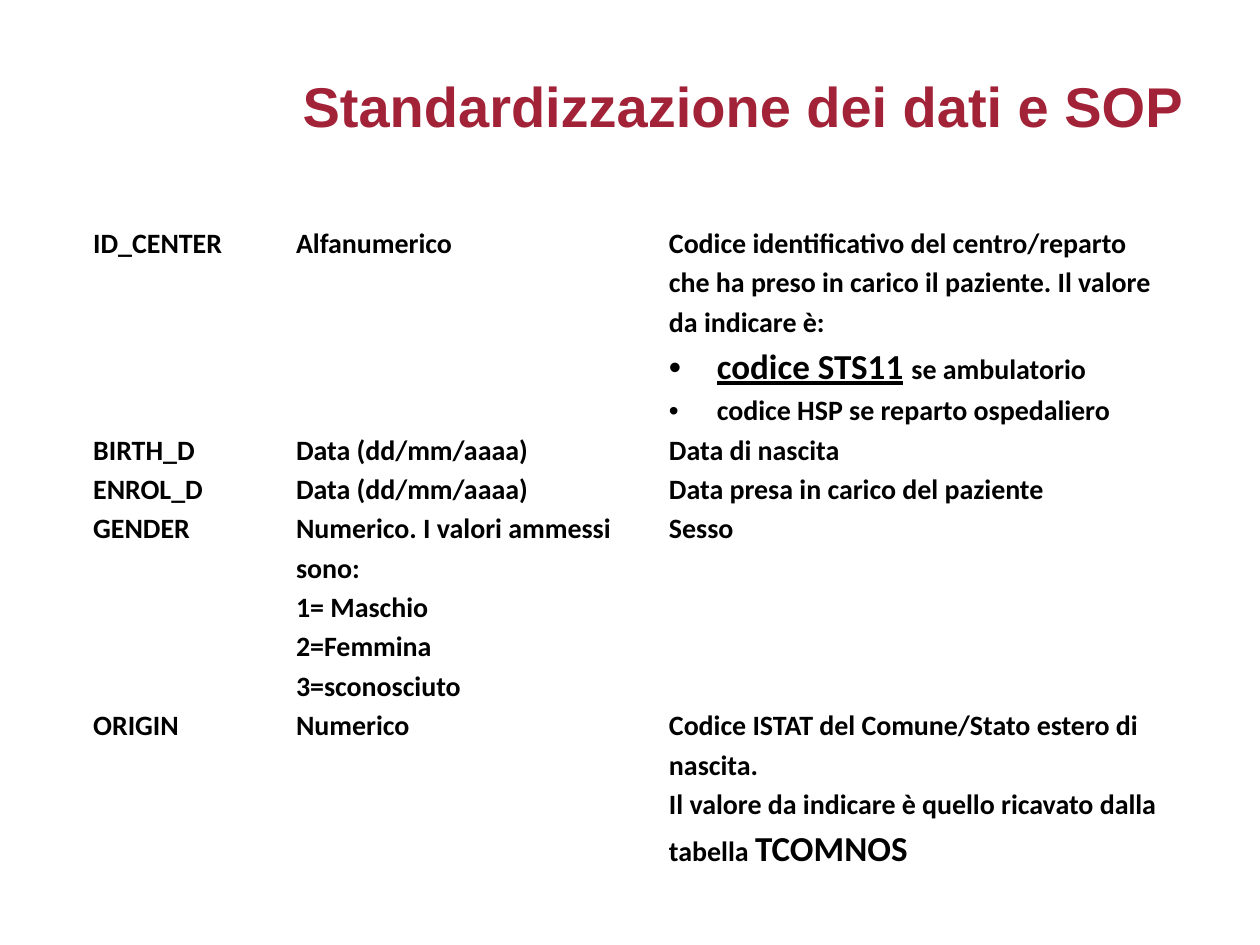
from typing import NamedTuple

from lxml.etree import SubElement
from pptx import Presentation
from pptx.dml.color import RGBColor
from pptx.enum.text import MSO_ANCHOR, PP_ALIGN
from pptx.oxml.ns import qn
from pptx.util import Inches, Pt

WHITE, BLACK, CRIMSON = "FFFFFF", "000000", "A22338"
BODY_SIZE, LARGE_SIZE = 16, 20
LINE_HEIGHT = 0.31
COLUMN_WIDTHS = (1.61, 2.96, 4.09)


class Piece(NamedTuple):
    text: str
    size: int = BODY_SIZE
    underline: bool = False


class Line(NamedTuple):
    pieces: tuple[Piece, ...]
    bullet: bool = False


class Field(NamedTuple):
    name: str
    kind: tuple[Line, ...]
    meaning: tuple[Line, ...]
    text_lines: int


def plain(*texts: str) -> tuple[Line, ...]:
    """One unbulleted line for each text."""
    return tuple(Line((Piece(text),)) for text in texts)


FIELDS = (
    Field(
        "ID_CENTER",
        plain("Alfanumerico"),
        plain("Codice identificativo del centro/reparto che ha preso in carico "
              "il paziente. Il valore da indicare è:")
        + (
            Line((Piece("codice STS11", LARGE_SIZE, True), Piece(" ", LARGE_SIZE),
                  Piece("se ambulatorio")), bullet=True),
            Line((Piece("codice HSP se reparto ospedaliero"),), bullet=True),
        ),
        5,
    ),
    Field("BIRTH_D", plain("Data (dd/mm/aaaa)"), plain("Data di nascita"), 1),
    Field("ENROL_D", plain("Data (dd/mm/aaaa)"),
          plain("Data presa in carico del paziente"), 1),
    Field(
        "GENDER",
        plain("Numerico. I valori ammessi sono:", "1= Maschio", "2=Femmina", "3=sconosciuto"),
        plain("Sesso"),
        5,
    ),
    Field(
        "ORIGIN",
        plain("Numerico"),
        plain("Codice ISTAT del Comune/Stato estero di nascita.")
        + (Line((Piece("Il valore da indicare è quello ricavato dalla tabella "),
                 Piece("TCOMNOS", LARGE_SIZE))),),
        4,
    ),
)


def color(value: str) -> RGBColor:
    return RGBColor.from_string(value)


def style_font(font, name: str, size: int, hex_color: str) -> None:
    font.name = name
    font.size = Pt(size)
    font.bold = True
    font.color.rgb = color(hex_color)


def add_bullet(paragraph) -> None:
    properties = paragraph._p.get_or_add_pPr()
    indent = Inches(0.38)
    properties.set("marL", str(int(indent)))
    properties.set("indent", str(-int(indent)))
    SubElement(properties, qn("a:buFont"), typeface="Arial")
    SubElement(properties, qn("a:buChar"), char="•")


def add_borders(cell, bottom_width: int) -> None:
    properties = cell._tc.get_or_add_tcPr()
    for side, width in (("L", 1), ("R", 1), ("T", 1), ("B", bottom_width)):
        border = SubElement(properties, qn(f"a:ln{side}"), w=str(int(Pt(width))))
        fill = SubElement(border, qn("a:solidFill"))
        SubElement(fill, qn("a:srgbClr"), val=WHITE)


def fill_cell(cell, lines: tuple[Line, ...], bottom_width: int) -> None:
    add_borders(cell, bottom_width)
    cell.fill.solid()
    cell.fill.fore_color.rgb = color(WHITE)
    cell.margin_left = cell.margin_right = Inches(0.07)
    cell.margin_top = cell.margin_bottom = 0
    frame = cell.text_frame
    for index, line in enumerate(lines):
        paragraph = frame.add_paragraph() if index else frame.paragraphs[0]
        paragraph.line_spacing = 1.15
        if line.bullet:
            add_bullet(paragraph)
        for piece in line.pieces:
            run = paragraph.add_run()
            run.text = piece.text
            style_font(run.font, "Calibri", piece.size, BLACK)
            run.font.underline = piece.underline


def add_title(slide, text: str) -> None:
    title = slide.shapes.title
    title.left, title.top = Inches(1), Inches(0.58)
    title.width, title.height = Inches(8.5), Inches(1.25)
    title.text_frame.vertical_anchor = MSO_ANCHOR.TOP
    paragraph = title.text_frame.paragraphs[0]
    paragraph.alignment = PP_ALIGN.RIGHT
    paragraph.line_spacing = 0.9
    run = paragraph.add_run()
    run.text = text
    style_font(run.font, "Arial", 32, CRIMSON)


def add_field_table(slide, fields: tuple[Field, ...]) -> None:
    height = LINE_HEIGHT * sum(field.text_lines for field in fields)
    table = slide.shapes.add_table(
        len(fields), len(COLUMN_WIDTHS), Inches(0.67), Inches(1.76),
        Inches(sum(COLUMN_WIDTHS)), Inches(height)).table
    table.first_row = table.horz_banding = False
    for column, width in zip(table.columns, COLUMN_WIDTHS):
        column.width = Inches(width)
    for index, (row, field) in enumerate(zip(table.rows, fields)):
        row.height = Inches(LINE_HEIGHT * field.text_lines)
        for cell, lines in zip(row.cells, (plain(field.name), field.kind, field.meaning)):
            fill_cell(cell, lines, bottom_width=1 if index else 3)


def main() -> None:
    presentation = Presentation()
    presentation.slide_width, presentation.slide_height = Inches(10), Inches(7.5)
    slide = presentation.slides.add_slide(presentation.slide_layouts[5])
    add_title(slide, "Standardizzazione dei dati e SOP")
    add_field_table(slide, FIELDS)
    presentation.save("out.pptx")


if __name__ == "__main__":
    main()
